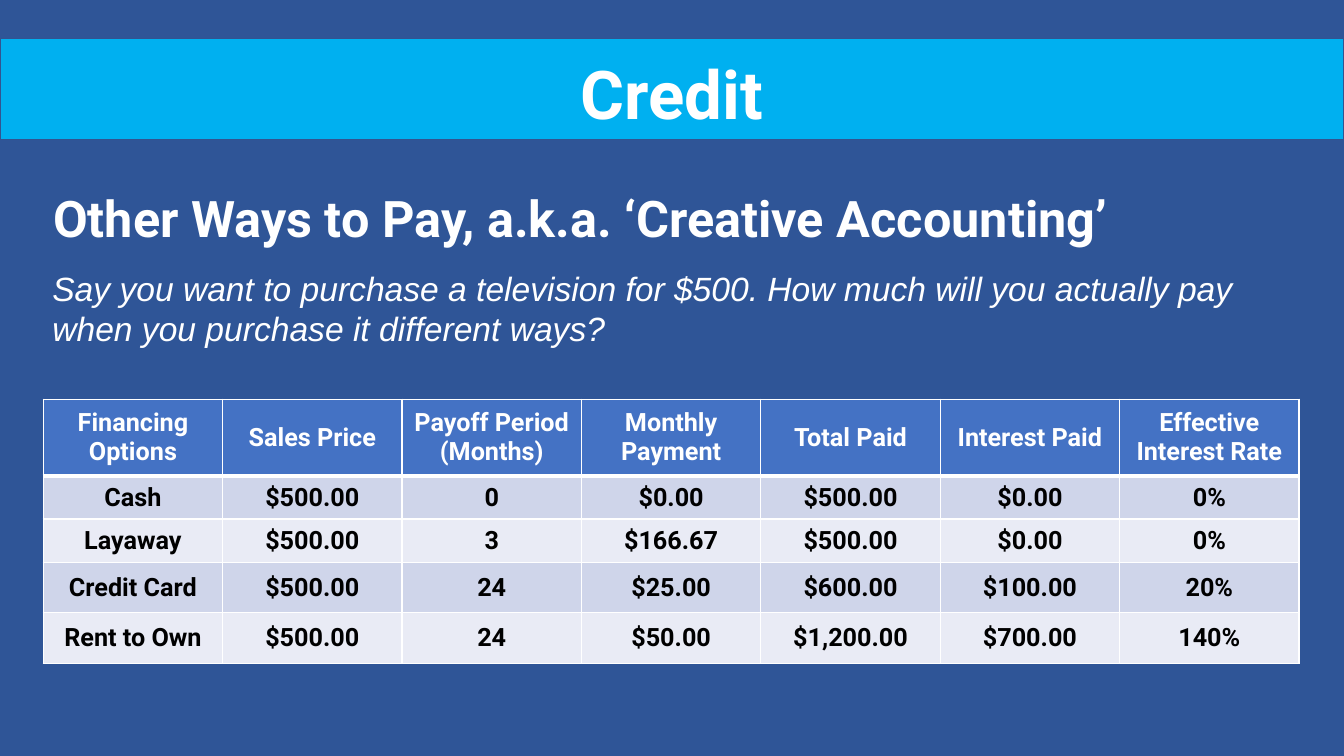
from lxml import etree
from pptx import Presentation
from pptx import util as u
from pptx.dml.color import RGBColor
from pptx.enum import shapes, text
from pptx.oxml.ns import qn

TITLE = "Credit"
HEADING = "Other Ways to Pay, a.k.a. ‘Creative Accounting’"
QUESTION = ("Say you want to purchase a television for $500. How much will you "
            "actually pay when you purchase it different ways?")
OPTIONS = [
    ("Financing Options", "Sales Price", "Payoff Period (Months)", "Monthly Payment",
     "Total Paid", "Interest Paid", "Effective Interest Rate"),
    ("Cash", "$500.00", "0", "$0.00", "$500.00", "$0.00", "0%"),
    ("Layaway", "$500.00", "3", "$166.67", "$500.00", "$0.00", "0%"),
    ("Credit Card", "$500.00", "24", "$25.00", "$600.00", "$100.00", "20%"),
    ("Rent to Own", "$500.00", "24", "$50.00", "$1,200.00", "$700.00", "140%"),
]
ROW_HEIGHTS = (1.93, 1.09, 1.09, 1.27, 1.27)


class Theme:
    background, banner, banner_line = "2F5597", "00B0F0", "325491"
    header, bands = "4472C4", ("CFD5EA", "E9EBF5")
    light, dark = "FFFFFF", "000000"
    grid, header_rule = 1, 3
    title = {"name": "Roboto", "size": u.Pt(48), "bold": True}
    heading = {"name": "Roboto", "size": u.Pt(36), "bold": True}
    question = {"name": "Arial", "size": u.Pt(24), "italic": True}
    cell = {"name": "Roboto", "size": u.Pt(18), "bold": True}


# Content and place of each text box: left, top, width, height in cm
TEXT_BOXES = [
    (TITLE, (4.52, 1.19, 24.84, 2.31), Theme.title, text.PP_ALIGN.CENTER),
    (HEADING, (1.09, 4.6, 31.04, 1.8), Theme.heading, text.PP_ALIGN.LEFT),
    (QUESTION, (1.07, 6.63, 30.4, 2.31), Theme.question, text.PP_ALIGN.LEFT),
]
TABLE_LEFT, TABLE_TOP, TABLE_WIDTH = 1.09, 10.06, 31.65


def paint(fill, color):
    fill.solid()
    fill.fore_color.rgb = RGBColor.from_string(color)


def write(frame, words, style, color, alignment):
    paragraph = frame.paragraphs[0]
    paragraph.alignment = alignment
    run = paragraph.add_run()
    run.text = words
    for name, value in style.items():
        setattr(run.font, name, value)
    run.font.color.rgb = RGBColor.from_string(color)


def add_border(cell, side, points):
    properties = cell._tc.get_or_add_tcPr()
    line = etree.SubElement(properties, qn(f"a:ln{side}"), w=str(u.Pt(points)))
    fill = etree.SubElement(line, qn("a:solidFill"))
    etree.SubElement(fill, qn("a:srgbClr"), val=Theme.light)


def add_banner(slide, width):
    banner = slide.shapes.add_shape(
        shapes.MSO_SHAPE.RECTANGLE, 0, u.Cm(0.97), width, u.Cm(2.54))
    banner.shadow.inherit = False
    paint(banner.fill, Theme.banner)
    banner.line.color.rgb = RGBColor.from_string(Theme.banner_line)
    banner.line.width = u.Pt(1)


def add_text(slide, words, place, style, alignment):
    frame = slide.shapes.add_textbox(*map(u.Cm, place)).text_frame
    frame.word_wrap = True
    frame.auto_size = text.MSO_AUTO_SIZE.SHAPE_TO_FIT_TEXT
    write(frame, words, style, Theme.light, alignment)


def add_options_table(slide):
    columns = len(OPTIONS[0])
    table = slide.shapes.add_table(
        len(OPTIONS), columns, u.Cm(TABLE_LEFT), u.Cm(TABLE_TOP),
        u.Cm(TABLE_WIDTH), u.Cm(sum(ROW_HEIGHTS))).table
    for column in table.columns:
        column.width = u.Cm(TABLE_WIDTH / columns)
    for index, (row, height) in enumerate(zip(OPTIONS, ROW_HEIGHTS)):
        table.rows[index].height = u.Cm(height)
        is_header = index == 0
        background = Theme.header if is_header else Theme.bands[(index - 1) % 2]
        rules = {"L": Theme.grid, "R": Theme.grid,
                 "T": Theme.header_rule if index == 1 else Theme.grid,
                 "B": Theme.header_rule if is_header else Theme.grid}
        for cell, words in zip(table.rows[index].cells, row):
            for side, points in rules.items():
                add_border(cell, side, points)
            paint(cell.fill, background)
            cell.vertical_anchor = text.MSO_ANCHOR.MIDDLE
            write(cell.text_frame, words, Theme.cell,
                  Theme.light if is_header else Theme.dark, text.PP_ALIGN.CENTER)


def main():
    presentation = Presentation()
    presentation.slide_width, presentation.slide_height = u.Cm(33.87), u.Cm(19.05)
    slide = presentation.slides.add_slide(presentation.slide_layouts[6])
    paint(slide.background.fill, Theme.background)

    # Banner, then the text over and below it
    add_banner(slide, presentation.slide_width)
    for box in TEXT_BOXES:
        add_text(slide, *box)

    # Comparison of financing options
    add_options_table(slide)
    presentation.save("out.pptx")


if __name__ == "__main__":
    main()
